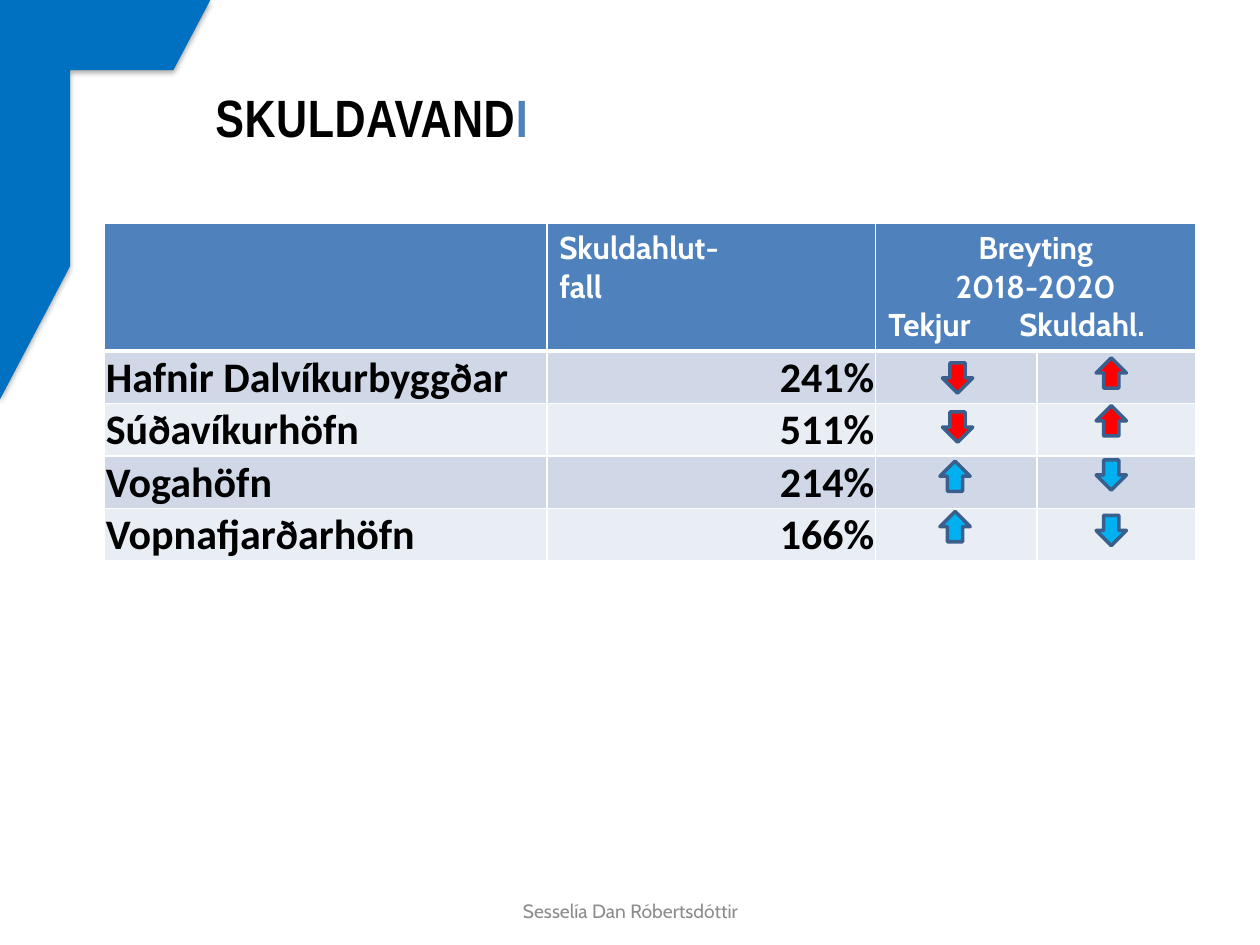
from dataclasses import dataclass

from pptx import Presentation
from pptx.dml.color import RGBColor
from pptx.enum.shapes import MSO_SHAPE
from pptx.enum.text import MSO_ANCHOR, PP_ALIGN
from pptx.oxml import parse_xml
from pptx.oxml.ns import nsdecls
from pptx.util import Inches, Pt

UP, DOWN = MSO_SHAPE.UP_ARROW, MSO_SHAPE.DOWN_ARROW
LEFT, CENTER, RIGHT = PP_ALIGN.LEFT, PP_ALIGN.CENTER, PP_ALIGN.RIGHT
MIDDLE, BOTTOM = MSO_ANCHOR.MIDDLE, MSO_ANCHOR.BOTTOM
TITLE_ONLY = 5


@dataclass(frozen=True)
class Theme:
    corner: str = "0070C0"
    accent: str = "4F81BD"
    bands: tuple = ("D0D8E8", "E9EDF4")
    worse: str = "FF0000"
    better: str = "00B0F0"
    outline: str = "3A5F8C"
    text: str = "000000"
    light: str = "FFFFFF"
    muted: str = "8C8C8C"
    title_font: str = "Arial Narrow"
    head_font: str = "Cabin"
    body_font: str = "Calibri"
    title_size: int = 30
    head_size: int = 18
    body_size: int = 24
    footer_size: int = 11


T = Theme()
TABLE_LEFT, TABLE_TOP = 0.83, 1.77
COLUMNS = (3.51, 2.61, 1.28, 1.26)
HEAD_HEIGHT, ROW_HEIGHT = 1.0, 0.41
ARROW = 0.24
# Harbour, debt ratio, whether the change is for the worse,
# and the arrow tops under income and debt ratio
HARBOURS = (
    ("Hafnir Dalvíkurbyggðar", "241%", True, (2.88, 2.84)),
    ("Súðavíkurhöfn", "511%", True, (3.27, 3.22)),
    ("Vogahöfn", "214%", False, (3.66, 3.65)),
    ("Vopnafjarðarhöfn", "166%", False, (4.06, 4.09)),
)


def rgb(value):
    return RGBColor.from_string(value)


def add_run(p, text, font, size, color, bold=True):
    r = p.add_run()
    r.text = text
    r.font.name, r.font.size, r.font.bold = font, Pt(size), bold
    r.font.color.rgb = rgb(color)
    return r


def add_corner(s):
    sp = s.shapes.add_shape(MSO_SHAPE.HALF_FRAME, 0, 0, Inches(1.67), Inches(3.17))
    sp.fill.solid()
    sp.fill.fore_color.rgb = rgb(T.corner)
    sp.line.fill.background()
    sp._element.spPr.append(parse_xml(
        f'<a:effectLst {nsdecls("a")}><a:outerShdw blurRad="{Pt(3.1)}" dist="{Pt(1.8)}" '
        'dir="5400000" rotWithShape="0"><a:srgbClr val="000000"><a:alpha val="35000"/>'
        '</a:srgbClr></a:outerShdw></a:effectLst>'))
    s.shapes._spTree.insert(2, sp._element)


def add_title(s):
    sp = s.shapes.title
    sp.left, sp.top, sp.width, sp.height = map(Inches, (1.61, 0.3, 8.07, 1.25))
    sp.text_frame.vertical_anchor = MIDDLE
    p = sp.text_frame.paragraphs[0]
    p.alignment = LEFT
    for text, color in (("SKULDAVAND", T.text), ("I", T.accent)):
        r = add_run(p, text, T.title_font, T.title_size, color)
        r.font._element.set("spc", "30")


def style_cell(cell, fill, bottom=1):
    """Give a cell white borders, then its fill, in the order the schema asks."""
    tc_pr = cell._tc.get_or_add_tcPr()
    for side, width in (("L", 1), ("R", 1), ("T", 1), ("B", bottom)):
        tc_pr.append(parse_xml(
            f'<a:ln{side} {nsdecls("a")} w="{Pt(width)}"><a:solidFill>'
            f'<a:srgbClr val="{T.light}"/></a:solidFill></a:ln{side}>'))
    cell.fill.solid()
    cell.fill.fore_color.rgb = rgb(fill)


def write_head(cell, lines):
    tf = cell.text_frame
    for i, (text, align) in enumerate(lines):
        p = tf.add_paragraph() if i else tf.paragraphs[0]
        p.alignment = align
        if "\t" in text:
            p._p.get_or_add_pPr().append(parse_xml(
                f'<a:tabLst {nsdecls("a")}><a:tab pos="{Inches(1.04)}" algn="l"/></a:tabLst>'))
        add_run(p, text, T.head_font, T.head_size, T.light)


def write_body(cell, text, align):
    cell.vertical_anchor = BOTTOM
    cell.margin_left = cell.margin_right = cell.margin_top = Inches(0.01)
    cell.margin_bottom = 0
    p = cell.text_frame.paragraphs[0]
    p.alignment = align
    add_run(p, text, T.body_font, T.body_size, T.text)


def add_debt_table(s):
    rows = len(HARBOURS) + 1
    height = HEAD_HEIGHT + ROW_HEIGHT * len(HARBOURS)
    table = s.shapes.add_table(
        rows, len(COLUMNS), Inches(TABLE_LEFT), Inches(TABLE_TOP),
        Inches(sum(COLUMNS)), Inches(height)).table
    for column, width in zip(table.columns, COLUMNS):
        column.width = Inches(width)
    for i, row in enumerate(table.rows):
        row.height = Inches(ROW_HEIGHT if i else HEAD_HEIGHT)
        for cell in row.cells:
            if i:
                style_cell(cell, T.bands[(i - 1) % 2])
            else:
                style_cell(cell, T.accent, bottom=3)
    table.cell(0, 2).merge(table.cell(0, 3))
    write_head(table.cell(0, 1), (("Skuldahlut-", LEFT), ("fall", LEFT)))
    write_head(table.cell(0, 2), (("Breyting", CENTER), ("2018-2020", CENTER),
                                  ("Tekjur\tSkuldahl.", LEFT)))
    for i, (name, ratio, *_) in enumerate(HARBOURS, start=1):
        write_body(table.cell(i, 0), name, LEFT)
        write_body(table.cell(i, 1), ratio, RIGHT)


def add_arrow(s, kind, left, top, color):
    sp = s.shapes.add_shape(kind, Inches(left), Inches(top), Inches(ARROW), Inches(ARROW))
    sp.shadow.inherit = False
    sp.fill.solid()
    sp.fill.fore_color.rgb = rgb(color)
    sp.line.color.rgb = rgb(T.outline)
    sp.line.width = Pt(2)


def add_trends(s):
    for _, _, worse, (income_top, debt_top) in HARBOURS:
        color = T.worse if worse else T.better
        income, debt = (DOWN, UP) if worse else (UP, DOWN)
        add_arrow(s, income, 7.48 if worse else 7.46, income_top, color)
        add_arrow(s, debt, 8.7, debt_top, color)


def add_footer(s):
    tf = s.shapes.add_textbox(*map(Inches, (3.42, 7.07, 3.17, 0.32))).text_frame
    tf.word_wrap = True
    tf.vertical_anchor = MIDDLE
    p = tf.paragraphs[0]
    p.alignment = CENTER
    add_run(p, "Sesselía Dan Róbertsdóttir", T.head_font, T.footer_size, T.muted, bold=False)


def main():
    prs = Presentation()
    prs.slide_width, prs.slide_height = Inches(10), Inches(7.5)
    s = prs.slides.add_slide(prs.slide_layouts[TITLE_ONLY])
    add_corner(s)
    add_title(s)
    add_debt_table(s)
    add_trends(s)
    add_footer(s)
    prs.save("out.pptx")


if __name__ == "__main__":
    main()
